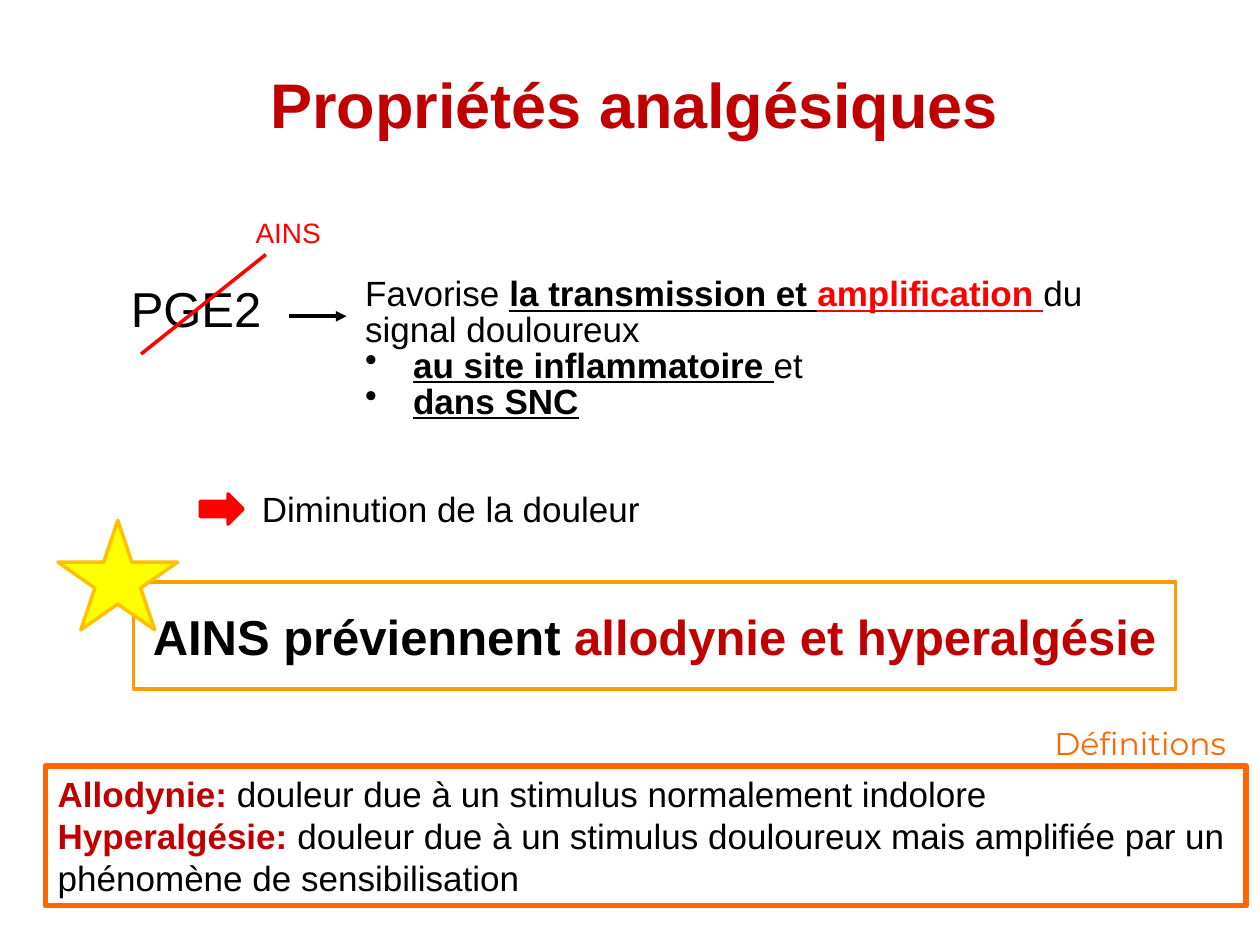
from lxml import etree
from pptx import Presentation
from pptx.dml.color import RGBColor
from pptx.enum.shapes import MSO_CONNECTOR, MSO_SHAPE
from pptx.enum.text import MSO_ANCHOR, PP_ALIGN
from pptx.oxml.ns import qn
from pptx.util import Inches, Pt

CENTER, LEFT = PP_ALIGN.CENTER, PP_ALIGN.LEFT
MIDDLE, TOP = MSO_ANCHOR.MIDDLE, MSO_ANCHOR.TOP
RECT, STAR, ARROW = MSO_SHAPE.RECTANGLE, MSO_SHAPE.STAR_5_POINT, MSO_SHAPE.RIGHT_ARROW
STRAIGHT = MSO_CONNECTOR.STRAIGHT
COLORS = {
    "black": "000000", "dark_red": "C00000", "red": "FF0000",
    "orange": "FF6600", "amber": "FE9B03", "gold": "FFC000", "yellow": "FFFF00",
}
RGB = {name: RGBColor.from_string(value) for name, value in COLORS.items()}


def write(sp, paragraphs, size, font="Arial", align=LEFT, anchor=TOP, wrap=True):
    """Fill a shape; each run is (text, colour, style), style using b and u."""
    tf = sp.text_frame
    tf.word_wrap = wrap
    tf.vertical_anchor = anchor
    for i, runs in enumerate(paragraphs):
        p = tf.paragraphs[0] if i == 0 else tf.add_paragraph()
        p.alignment = align
        p.font.size = Pt(size)
        p.font.name = font
        for text, color, style in runs:
            r = p.add_run()
            r.text = text
            r.font.color.rgb = RGB[color]
            r.font.bold = "b" in style
            r.font.underline = "u" in style
    return tf


def add_shape(kind, box, line, width, fill=None):
    sp = s.shapes.add_shape(kind, *map(Inches, box))
    sp.shadow.inherit = False
    sp.line.color.rgb = RGB[line]
    sp.line.width = Pt(width)
    if fill:
        sp.fill.solid()
        sp.fill.fore_color.rgb = RGB[fill]
    else:
        sp.fill.background()
    return sp


prs = Presentation()
prs.slide_width, prs.slide_height = Inches(10), Inches(7.5)
s = prs.slides.add_slide(prs.slide_layouts[5])

# Title
title = s.shapes.title
title.left, title.top, title.width, title.height = map(Inches, (2.01, 0.21, 6.05, 1.3))
tf = write(title, [[("Propriétés analgésiques", "dark_red", "b")]], 36,
           align=CENTER, anchor=MIDDLE)
tf.paragraphs[0].line_spacing = 0.9

# Key message with its star
sp = add_shape(RECT, (1.06, 4.62, 8.27, 0.85), "amber", 2)
write(sp, [[("AINS préviennent ", "black", "b"),
            ("allodynie et hyperalgésie", "dark_red", "b")]], 28,
      align=CENTER, anchor=MIDDLE)
add_shape(STAR, (0.46, 4.13, 0.95, 0.87), "gold", 2, "yellow")

# Definitions
sp = add_shape(RECT, (0.36, 6.08, 9.53, 1.11), "orange", 3)
write(sp, [
    [("Allodynie: ", "dark_red", "b"),
     ("douleur due à un stimulus normalement indolore", "black", "")],
    [("Hyperalgésie: ", "dark_red", "b"),
     ("douleur due à un stimulus douloureux mais amplifiée par un "
      "phénomène de sensibilisation", "black", "")],
], 20)

# Single-line labels
labels = [
    ("Définitions", (8.27, 5.7, 1.69, 0.4), 18, "Montserrat", "orange"),
    ("PGE2", (0.94, 2.16, 1.36, 0.57), 28, "Arial", "black"),
    ("Diminution de la douleur", (1.98, 3.82, 3.23, 0.44), 20, "Arial", "black"),
    ("AINS", (1.93, 1.66, 0.72, 0.37), 16, "Arial", "red"),
]
for text, box, size, font, color in labels:
    sp = s.shapes.add_textbox(*map(Inches, box))
    write(sp, [[(text, color, "")]], size, font, wrap=False)

# Effects of PGE2, with two bulleted sites
sp = s.shapes.add_textbox(*map(Inches, (1.99, 2.16, 7.47, 1.76)))
tf = write(sp, [
    [("Favorise ", "black", ""), ("la transmission et ", "black", "bu"),
     ("amplification ", "red", "bu"), ("du signal douloureux", "black", "")],
    [("au site inflammatoire ", "black", "bu"), ("et", "black", "")],
    [("dans SNC", "black", "bu")],
], 20)
for i, p in enumerate(tf.paragraphs):
    p.line_spacing = 0.85
    hanging = 0.38 if i else 0
    pPr = p._p.get_or_add_pPr()
    pPr.set("marL", str(Inches(0.81 + hanging)))
    pPr.set("indent", str(Inches(-hanging)))
    if i:
        bullet = etree.Element(qn("a:buChar"), char="•")
        pPr.find(qn("a:defRPr")).addprevious(bullet)

# Arrow to the effects, and the stroke crossing out PGE2
for ends, color, arrowhead in [((2.29, 2.51, 2.75, 2.51), "black", True),
                               ((1.12, 2.81, 2.11, 2.02), "red", False)]:
    line = s.shapes.add_connector(STRAIGHT, *map(Inches, ends))
    line.line.color.rgb = RGB[color]
    line.line.width = Pt(2)
    if arrowhead:
        etree.SubElement(line.line._get_or_add_ln(), qn("a:tailEnd"), type="triangle")
    etree.SubElement(line._element.spPr, qn("a:effectLst"))

# Arrow to the outcome
add_shape(ARROW, (1.59, 3.92, 0.34, 0.24), "red", 2, "red")

prs.save("out.pptx")
